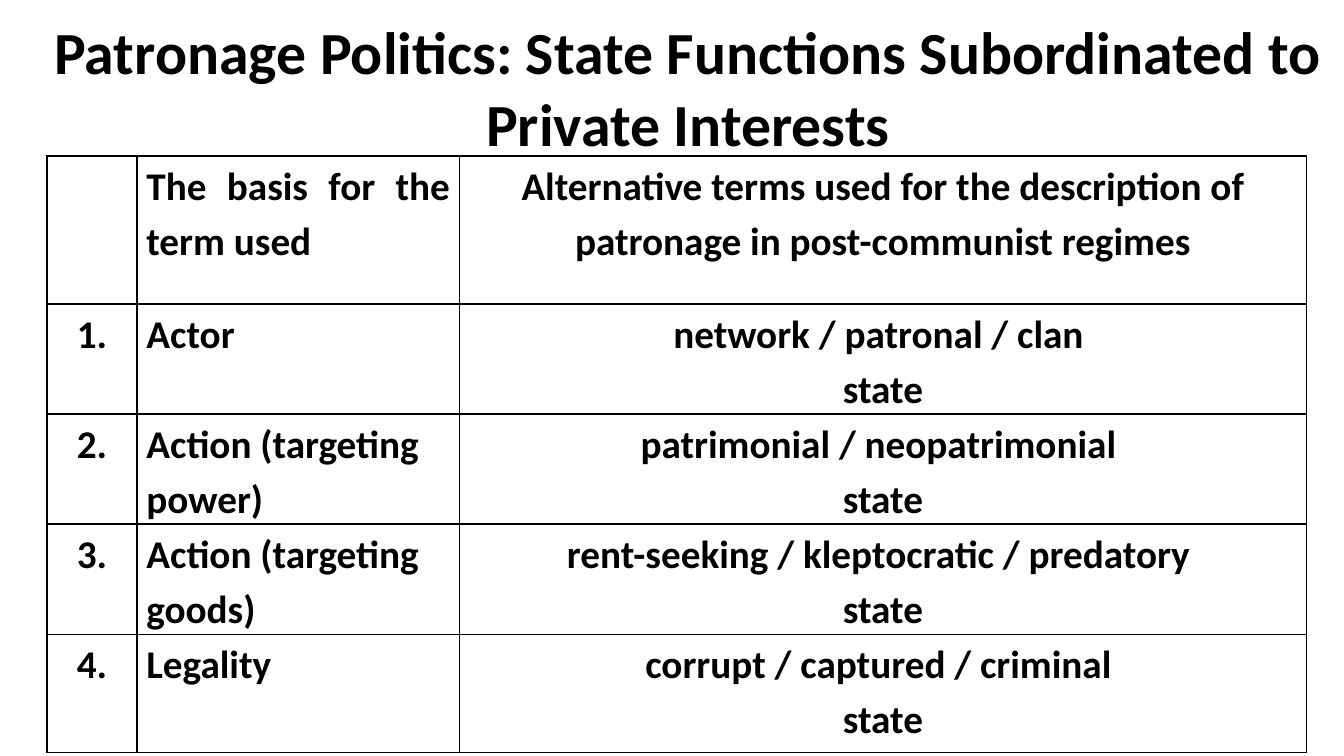
from lxml import etree
from pptx import Presentation
from pptx.dml.color import RGBColor
from pptx.enum import text as t
from pptx.oxml.ns import qn
from pptx.util import Inches, Pt

COLORS = {"ink": "000000"}
FONT = "Calibri"
ALIGN = t.PP_ALIGN
COLS = [0.67, 2.4, 6.3]
ROWS = [1.1, 0.82, 0.82, 0.82, 0.88]

TITLE = "Patronage Politics: State Functions Subordinated to Private Interests"
HEAD = ["", "The basis for the term used",
        "Alternative terms used for the description of "
        "patronage in post-communist regimes"]
TERMS = [
    ("Actor", "network / patronal / clan "),
    ("Action (targeting power)", "patrimonial / neopatrimonial "),
    ("Action (targeting goods)", "rent-seeking / kleptocratic / predatory "),
    ("Legality", "corrupt / captured / criminal "),
]


def style(para, size, align):
    para.alignment = align
    font = para.font
    font.name, font.size, font.bold = FONT, Pt(size), True
    font.color.rgb = RGBColor.from_string(COLORS["ink"])


def add_title(slide):
    title = slide.shapes.title
    title.left, title.top = Inches(0.12), Inches(0.06)
    title.width, title.height = Inches(10), Inches(1.1)
    frame = title.text_frame
    frame.text = TITLE
    frame.word_wrap = True
    frame.auto_size = t.MSO_AUTO_SIZE.NONE
    frame.vertical_anchor = t.MSO_ANCHOR.TOP
    style(frame.paragraphs[0], 32, ALIGN.CENTER)


def add_border(cell):
    props = cell._tc.get_or_add_tcPr()
    for spot, side in enumerate(("lnL", "lnR", "lnT", "lnB")):
        line = etree.Element(qn(f"a:{side}"), w=str(Pt(1)))
        fill = etree.SubElement(line, qn("a:solidFill"))
        etree.SubElement(fill, qn("a:srgbClr"), val=COLORS["ink"])
        props.insert(spot, line)


def fill_cell(cell, words, align):
    cell.margin_left = cell.margin_right = Inches(0.07)
    cell.margin_top = cell.margin_bottom = 0
    cell.fill.background()
    add_border(cell)
    cell.text = words
    for para in cell.text_frame.paragraphs:
        style(para, 21, align)
        para.line_spacing = 1.15


def add_terms(slide):
    frame = slide.shapes.add_table(
        len(ROWS), len(COLS), Inches(0.35), Inches(1.16),
        Inches(sum(COLS)), Inches(sum(ROWS)))
    table = frame.table
    table.horz_banding = False
    for col, width in zip(table.columns, COLS):
        col.width = Inches(width)
    for row, height in zip(table.rows, ROWS):
        row.height = Inches(height)

    # Numbered rows: each list of terms ends with "state" on its own line
    body = [[f"{n}.", basis, f"{terms}\nstate"]
            for n, (basis, terms) in enumerate(TERMS, 1)]
    for r, row in enumerate([HEAD] + body):
        basis = ALIGN.LEFT if r else ALIGN.JUSTIFY
        aligns = [ALIGN.CENTER, basis, ALIGN.CENTER]
        for c, (words, align) in enumerate(zip(row, aligns)):
            fill_cell(table.cell(r, c), words, align)


def main():
    deck = Presentation()
    # Widescreen, 16 to 9
    deck.slide_width, deck.slide_height = Inches(10), Inches(10 * 9 / 16)
    slide = deck.slides.add_slide(deck.slide_layouts[5])
    add_title(slide)
    add_terms(slide)
    deck.save("out.pptx")


if __name__ == "__main__":
    main()
